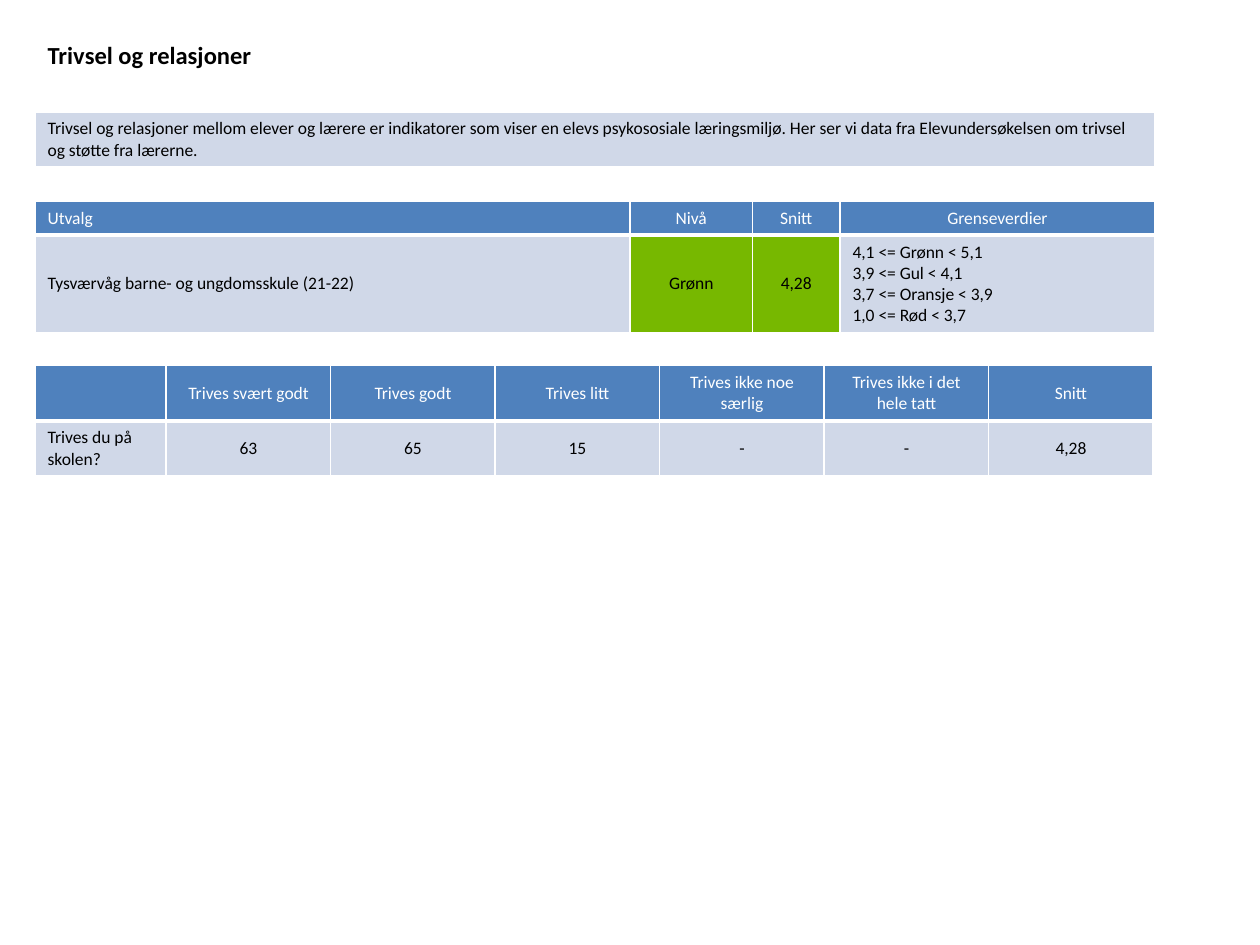
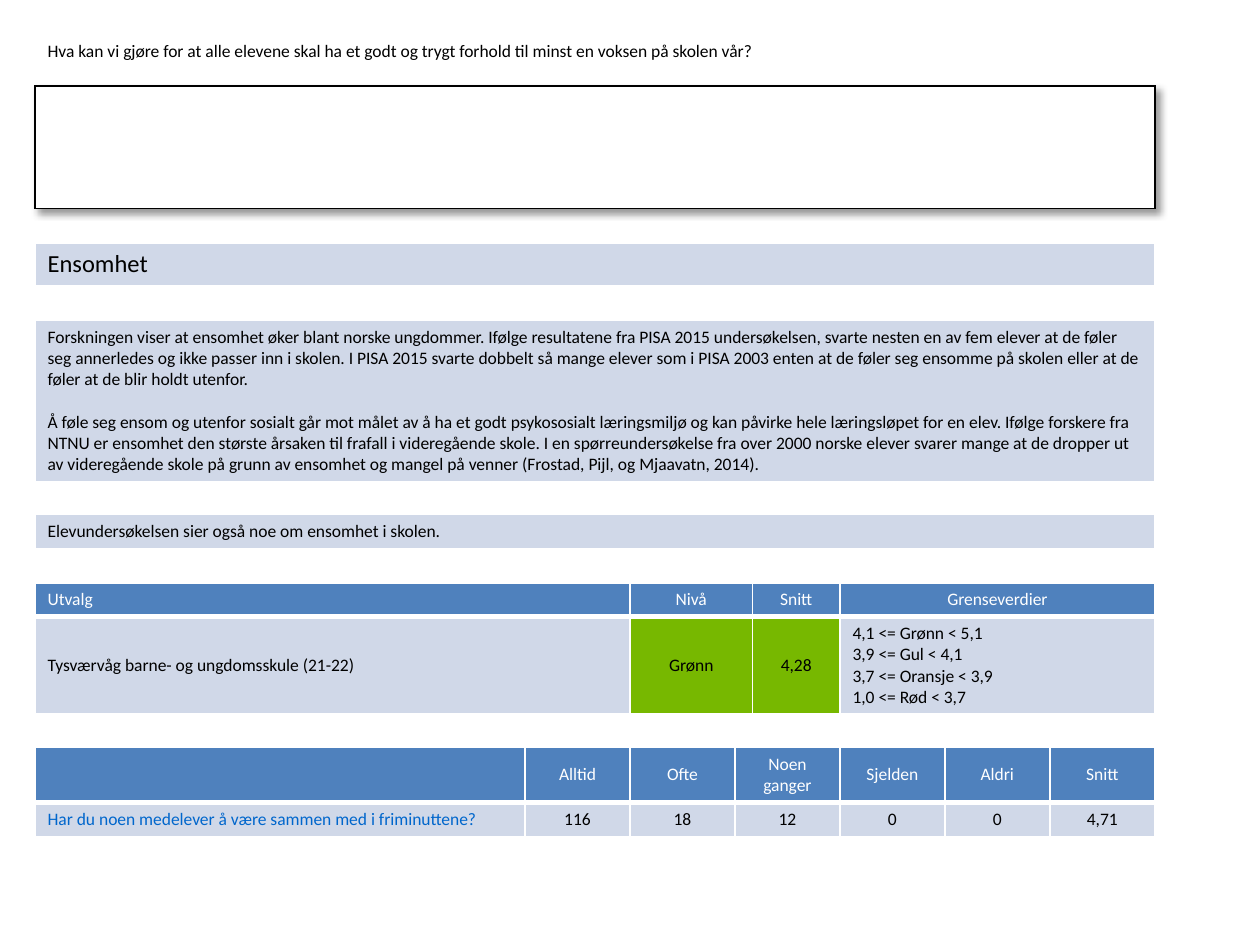
from dataclasses import dataclass
from lxml.etree import SubElement
from pptx import Presentation
from pptx.dml.color import RGBColor
from pptx.enum.text import MSO_ANCHOR, PP_ALIGN
from pptx.oxml import parse_xml
from pptx.oxml.ns import qn
from pptx.util import Pt


@dataclass(frozen=True)
class Theme:
    font: str = "Calibri"
    title_size: int = 14
    body_size: int = 10
    white: str = "FFFFFF"
    black: str = "000000"
    header: str = "4F81BD"
    band: str = "D0D8E8"
    green: str = "77B800"
    question: str = "0066CC"
    left: int = 20
    width: int = 640
    row_height: int = 18


theme = Theme()

SHADOW = (
    '<a:effectLst xmlns:a="http://schemas.openxmlformats.org/drawingml/2006/main">'
    '<a:outerShdw blurRad="50800" dist="38100" dir="2700000" algn="tl" rotWithShape="0">'
    '<a:srgbClr val="000000"><a:alpha val="40000"/></a:srgbClr>'
    '</a:outerShdw></a:effectLst>'
)


def add_grid(page, top, widths, rows, fill=theme.band, edge=theme.white,
             height=theme.row_height, size=theme.body_size, bold=False, gap=0,
             fills=None, colors=None):
    """Add a table; with two rows the first is a header. fills and colors map (row, column)."""
    grid = page.shapes.add_table(len(rows), len(widths), Pt(theme.left), Pt(top),
                                 Pt(sum(widths)), Pt(height * len(rows))).table
    grid.first_row = grid.horz_banding = False
    for column, width in zip(grid.columns, widths):
        column.width = Pt(width)
    for r, texts in enumerate(rows):
        is_header = len(rows) > 1 and r == 0
        for c, text in enumerate(texts):
            cell = grid.cell(r, c)
            cell.text = text
            cell.vertical_anchor = MSO_ANCHOR.MIDDLE
            # Text: labels and lists to the left, values centred
            color = theme.white if is_header else (colors or {}).get((r, c), theme.black)
            for number, para in enumerate(cell.text_frame.paragraphs):
                para.alignment = PP_ALIGN.CENTER if c and "\v" not in text else PP_ALIGN.LEFT
                para.space_before = Pt(gap if number else 0)
                para.font.name, para.font.size, para.font.bold = theme.font, Pt(size), bold
                para.font.color.rgb = RGBColor.from_string(color)
            # Borders come before the fill in the cell properties
            properties = cell._tc.get_or_add_tcPr()
            for side in ("L", "R", "T", "B"):
                weight = 3 if is_header and side == "B" else 1
                line = SubElement(properties, qn(f"a:ln{side}"), w=str(Pt(weight)))
                SubElement(SubElement(line, qn("a:solidFill")), qn("a:srgbClr"), val=edge)
            cell.fill.solid()
            cell.fill.fore_color.rgb = RGBColor.from_string(
                theme.header if is_header else (fills or {}).get((r, c), fill))
    return grid


deck = Presentation()
deck.slide_width, deck.slide_height = Pt(720), Pt(540)
blank = deck.slide_layouts[6]
wellbeing = deck.slides.add_slide(blank)
loneliness = deck.slides.add_slide(blank)
full_width = [theme.width]

# Wellbeing: heading and introduction
add_grid(wellbeing, 20, full_width, [["Trivsel og relasjoner"]],
         fill=theme.white, size=theme.title_size, bold=True)
add_grid(wellbeing, 64, full_width, [[
    "Trivsel og relasjoner mellom elever og lærere er indikatorer som viser en elevs "
    "psykososiale læringsmiljø. Her ser vi data fra Elevundersøkelsen om trivsel og "
    "støtte fra lærerne."]])

# Loneliness: question with an empty answer box
add_grid(loneliness, 20, full_width, [[
    "Hva kan vi gjøre for at alle elevene skal ha et godt og trygt forhold til minst en "
    "voksen på skolen vår?"]], fill=theme.white)
answer_box = add_grid(loneliness, 49, full_width, [[""]], fill=theme.white,
                      edge=theme.black, height=70)
answer_box._tbl.tblPr.insert(0, parse_xml(SHADOW))

# Loneliness: heading and research
add_grid(loneliness, 139, full_width, [["Ensomhet"]], size=theme.title_size)
add_grid(loneliness, 183, full_width, [[
    "Forskningen viser at ensomhet øker blant norske ungdommer. Ifølge resultatene fra "
    "PISA 2015 undersøkelsen, svarte nesten en av fem elever at de føler seg annerledes og "
    "ikke passer inn i skolen. I PISA 2015 svarte dobbelt så mange elever som i PISA 2003 "
    "enten at de føler seg ensomme på skolen eller at de føler at de blir holdt utenfor.\n"
    "Å føle seg ensom og utenfor sosialt går mot målet av å ha et godt psykososialt "
    "læringsmiljø og kan påvirke hele læringsløpet for en elev. Ifølge forskere fra NTNU er "
    "ensomhet den største årsaken til frafall i videregående skole. I en spørreundersøkelse "
    "fra over 2000 norske elever svarer mange at de dropper ut av videregående skole på "
    "grunn av ensomhet og mangel på venner (Frostad, Pijl, og Mjaavatn, 2014)."]], gap=12.2)
add_grid(loneliness, 294, full_width,
         [["Elevundersøkelsen sier også noe om ensomhet i skolen."]])

# Level table, the same on both pages
limits = "4,1 <= Grønn < 5,1\v3,9 <= Gul < 4,1\v3,7 <= Oransje < 3,9\v1,0 <= Rød < 3,7"
level_rows = [
    ["Utvalg", "Nivå", "Snitt", "Grenseverdier"],
    ["Tysværvåg barne- og ungdomsskule (21-22)", "Grønn", "4,28", limits],
]
for page, top in ((wellbeing, 115), (loneliness, 333)):
    add_grid(page, top, [340, 70, 50, 180], level_rows,
             fills={(1, 1): theme.green, (1, 2): theme.green})

# Answer counts
add_grid(wellbeing, 209, [75] + [94] * 6, [
    ["", "Trives svært godt", "Trives godt", "Trives litt", "Trives ikke noe særlig",
     "Trives ikke i det hele tatt", "Snitt"],
    ["Trives du på skolen?", "63", "65", "15", "-", "-", "4,28"],
])
add_grid(loneliness, 427, [280] + [60] * 6, [
    ["", "Alltid", "Ofte", "Noen ganger", "Sjelden", "Aldri", "Snitt"],
    ["Har du noen medelever å være sammen med i friminuttene?",
     "116", "18", "12", "0", "0", "4,71"],
], colors={(1, 0): theme.question})

deck.save("out.pptx")
